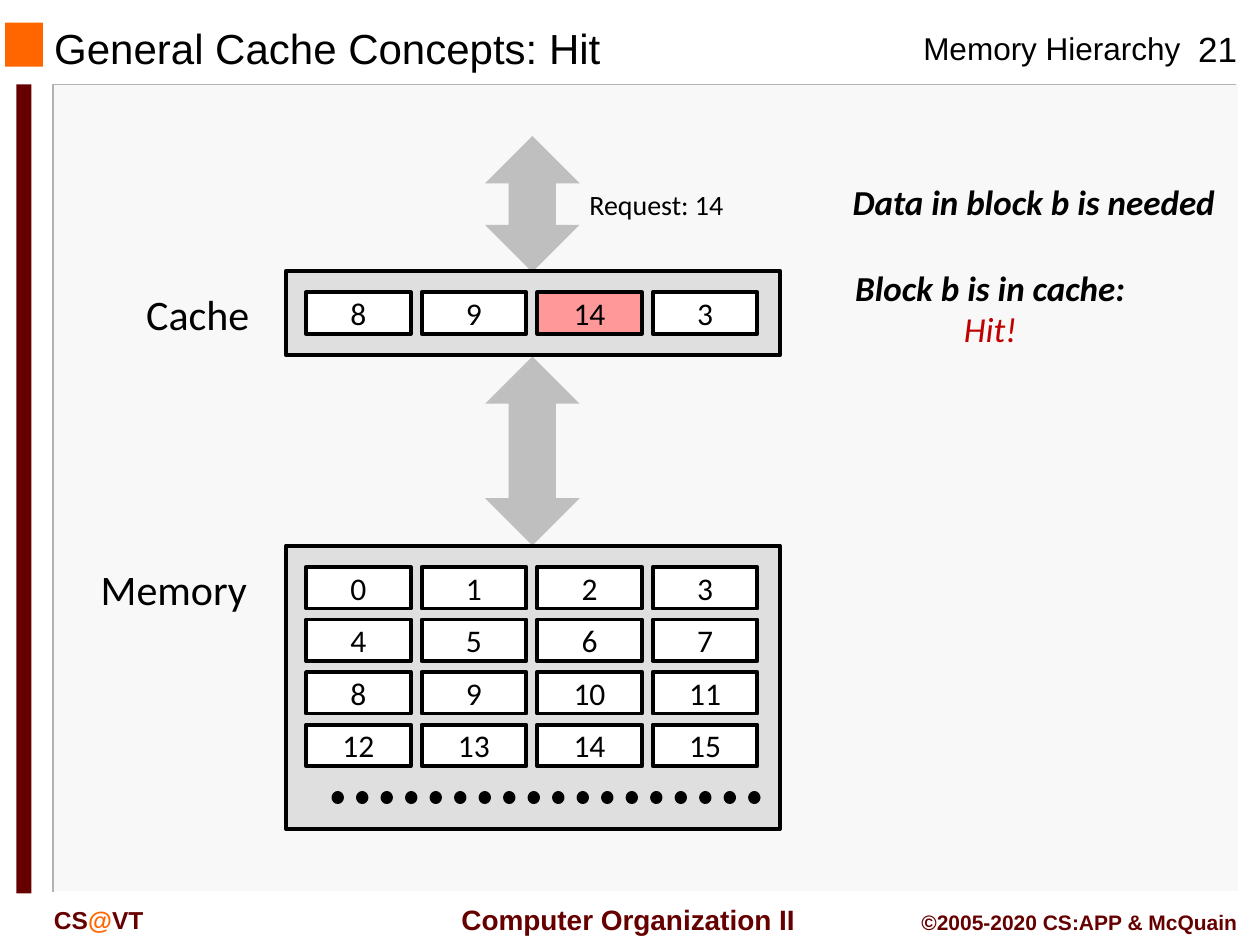
from dataclasses import dataclass

from pptx import Presentation
from pptx.dml.color import RGBColor
from pptx.enum.dml import MSO_LINE
from pptx.enum.shapes import MSO_CONNECTOR, MSO_SHAPE
from pptx.enum.text import MSO_ANCHOR, MSO_AUTO_SIZE, PP_ALIGN
from pptx.oxml.ns import qn
from pptx.util import Inches, Pt
from lxml.etree import SubElement


@dataclass(frozen=True)
class Theme:
    head_font: str = "Arial"
    body_font: str = "Calibri"
    black: str = "000000"
    white: str = "FFFFFF"
    panel: str = "F8F8F8"
    panel_edge: str = "B2B2B2"
    orange: str = "FF6600"
    maroon: str = "660000"
    arrow: str = "BFBFBF"
    store: str = "DFDFDF"
    hit: str = "FF9999"
    hit_text: str = "C00000"
    title: int = 24
    page: int = 20
    note: int = 20
    block: int = 18
    request: int = 16
    footer: int = 14
    credit: int = 12
    outline: float = 2.25


class SlideBuilder:
    def __init__(self, slide, theme):
        self.s = slide
        self.t = theme

    def run(self, p, text, size, color, font, bold=False, italic=False):
        r = p.add_run()
        r.text = text
        r.font.name, r.font.size = font, Pt(size)
        r.font.bold, r.font.italic = bold, italic
        r.font.color.rgb = RGBColor.from_string(color)

    def title(self, box, text):
        sp = self.s.shapes.title
        sp.left, sp.top, sp.width, sp.height = map(Inches, box)
        tf = sp.text_frame
        tf.auto_size = MSO_AUTO_SIZE.NONE
        tf.vertical_anchor = MSO_ANCHOR.MIDDLE
        p = tf.paragraphs[0]
        p.alignment = PP_ALIGN.LEFT
        self.run(p, text, self.t.title, self.t.black, self.t.head_font)

    def text(self, box, lines, size, font, align=PP_ALIGN.CENTER, wrap=False,
             anchor=MSO_ANCHOR.TOP, spacing=None):
        """Each line is a list of (text, color, bold, italic) runs."""
        tf = self.s.shapes.add_textbox(*map(Inches, box)).text_frame
        tf.word_wrap = wrap
        tf.vertical_anchor = anchor
        for i, runs in enumerate(lines):
            p = tf.add_paragraph() if i else tf.paragraphs[0]
            p.alignment = align
            p.line_spacing = spacing
            for text, color, bold, italic in runs:
                self.run(p, text, size, color, font, bold, italic)

    def shape(self, kind, box, fill, outlined=False):
        sp = self.s.shapes.add_shape(kind, *map(Inches, box))
        sp.shadow.inherit = False
        sp.fill.solid()
        sp.fill.fore_color.rgb = RGBColor.from_string(fill)
        if outlined:
            sp.line.color.rgb = RGBColor.from_string(self.t.black)
            sp.line.width = Pt(self.t.outline)
        else:
            sp.line.fill.background()
        return sp

    def block(self, left, top, number, fill):
        sp = self.shape(MSO_SHAPE.RECTANGLE, (left, top, 0.83, 0.33), fill, True)
        tf = sp.text_frame
        tf.vertical_anchor = MSO_ANCHOR.MIDDLE
        p = tf.paragraphs[0]
        p.alignment = PP_ALIGN.CENTER
        self.run(p, str(number), self.t.block, self.t.black, self.t.body_font)

    def block_row(self, top, numbers, hit=None):
        for col, number in enumerate(numbers):
            fill = self.t.hit if number == hit else self.t.white
            self.block(2.43 + col * 0.917, top, number, fill)

    def edge(self, points, color):
        points = [(Inches(x), Inches(y)) for x, y in points]
        fb = self.s.shapes.build_freeform(*points[0])
        fb.add_line_segments(points[1:], close=False)
        sp = fb.convert_to_shape()
        sp.shadow.inherit = False
        sp.fill.background()
        sp.line.color.rgb = RGBColor.from_string(color)
        sp.line.width = Pt(1)

    def dots(self, x1, x2, y):
        cxn = self.s.shapes.add_connector(
            MSO_CONNECTOR.STRAIGHT, Inches(x1), Inches(y), Inches(x2), Inches(y))
        cxn.line.color.rgb = RGBColor.from_string(self.t.black)
        cxn.line.width = Pt(7)
        cxn.line.dash_style = MSO_LINE.ROUND_DOT
        cxn.line._get_or_add_ln().set("cap", "rnd")
        SubElement(cxn._element.spPr, qn("a:effectLst"))


def main():
    prs = Presentation()
    prs.slide_width, prs.slide_height = Inches(10), Inches(7.5)
    t = Theme()
    b = SlideBuilder(prs.slides.add_slide(prs.slide_layouts[5]), t)

    # Background panel and side decoration
    b.shape(MSO_SHAPE.RECTANGLE, (0.43, 0.67, 9.4, 6.41), t.panel)
    b.edge([(9.81, 0.67), (0.42, 0.67), (0.42, 7.08)], t.panel_edge)
    b.edge([(9.83, 0.67), (9.83, 7.08), (0.44, 7.08)], t.white)
    b.shape(MSO_SHAPE.RECTANGLE, (0.04, 0.18, 0.3, 0.35), t.orange)
    b.shape(MSO_SHAPE.RECTANGLE, (0.13, 0.67, 0.12, 6.42), t.maroon)

    # Header
    b.title((0.33, 0.19, 6.33, 0.38), "General Cache Concepts: Hit")
    b.text((7.23, 0.18, 2.26, 0.4), [[("Memory Hierarchy", t.black, False, False)]],
           t.block, t.head_font, PP_ALIGN.LEFT)
    b.text((9.33, 0.17, 0.67, 0.43), [[("21", t.black, False, False)]],
           t.page, t.head_font, wrap=True)

    # Footer
    b.text((3.48, 7.11, 2.95, 0.37),
           [[(" Computer Organization II", t.maroon, True, False)]],
           t.request, t.head_font, anchor=MSO_ANCHOR.MIDDLE)
    b.text((0.33, 7.13, 1.5, 0.33),
           [[("CS", t.maroon, True, False), ("@", t.orange, True, False),
             ("VT", t.maroon, True, False)]],
           t.footer, t.head_font, PP_ALIGN.LEFT, wrap=True)
    b.text((7.17, 7.17, 2.75, 0.3),
           [[("©2005-2020 CS:APP & McQuain", t.maroon, True, False)]],
           t.credit, t.head_font, PP_ALIGN.RIGHT, wrap=True)

    # Transfer arrows
    for top, height in ((1.08, 1.08), (2.83, 1.5)):
        b.shape(MSO_SHAPE.UP_DOWN_ARROW, (3.85, top, 0.75, height), t.arrow)

    # Memory with its rows of blocks
    b.shape(MSO_SHAPE.RECTANGLE, (2.27, 4.33, 3.92, 2.25), t.store, True)
    for row in range(4):
        b.block_row(4.5 + row * 0.417, range(row * 4, row * 4 + 4))
    b.dots(2.68, 6.02, 6.33)

    # Cache with the requested block marked
    b.shape(MSO_SHAPE.RECTANGLE, (2.27, 2.15, 3.92, 0.67), t.store, True)
    b.block_row(2.32, (8, 9, 14, 3), hit=14)

    # Labels
    for box, label, size in (((1.05, 2.24, 1.04, 0.5), "Cache", t.title),
                             ((0.68, 4.42, 1.4, 0.5), "Memory", t.title),
                             ((4.56, 1.44, 1.3, 0.37), "Request: 14", t.request)):
        b.text(box, [[(label, t.black, False, False)]], size, t.body_font)

    # Explanation
    for box, lines in (
            ((6.66, 1.4, 3.09, 0.43),
             [[("Data in block b is needed", t.black, True, True)]]),
            ((6.68, 2.08, 2.36, 0.76),
             [[("Block b is in cache:", t.black, True, True)],
              [("Hit!", t.hit_text, False, True)]])):
        b.text(box, lines, t.note, t.body_font, anchor=MSO_ANCHOR.MIDDLE, spacing=0.98)

    prs.save("out.pptx")


if __name__ == "__main__":
    main()
